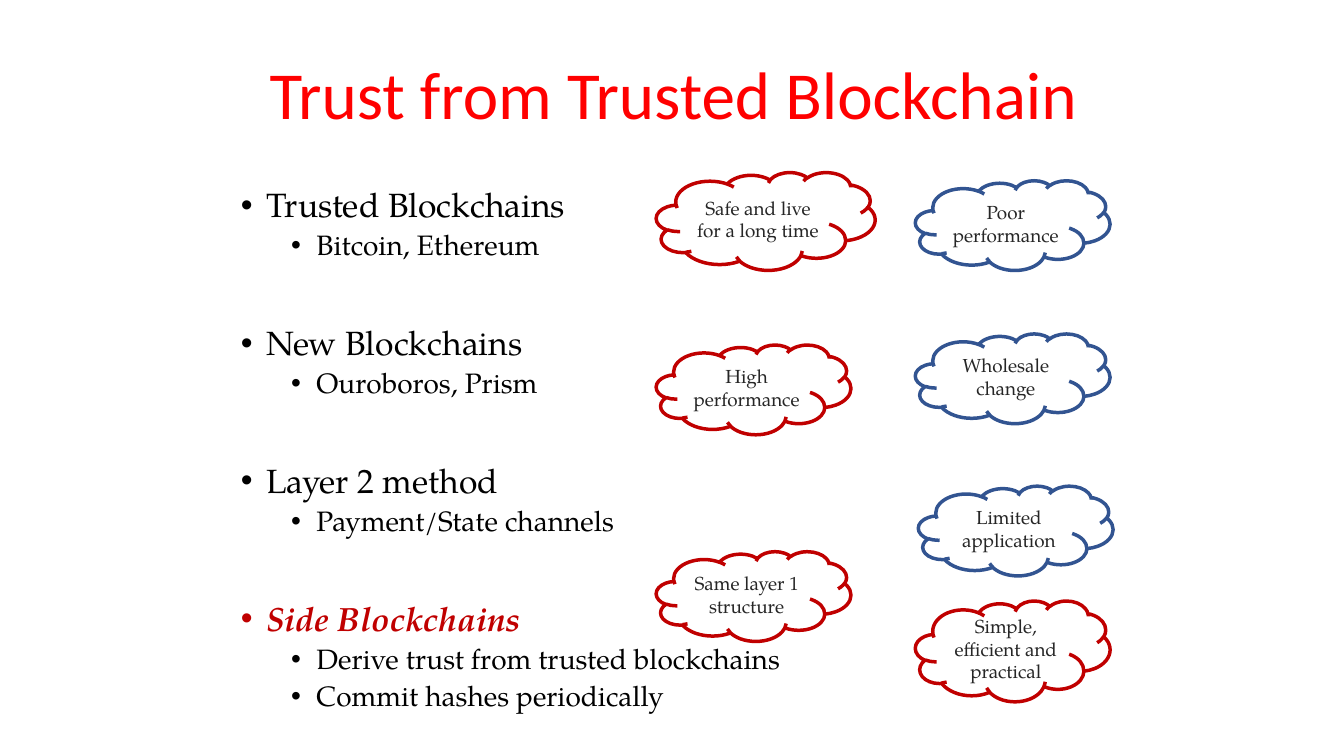
import pptx
import pptx.util
import pptx.dml.color
import pptx.enum.shapes
import pptx.enum.text
import lxml.etree

Inches = pptx.util.Inches
Pt = pptx.util.Pt
RGBColor = pptx.dml.color.RGBColor
PP_ALIGN = pptx.enum.text.PP_ALIGN
MSO_ANCHOR = pptx.enum.text.MSO_ANCHOR

TITLE_RED = RGBColor(0xFF, 0x00, 0x00)
RED = RGBColor(0xC0, 0x00, 0x00)
BLUE = RGBColor(0x32, 0x54, 0x91)
BLACK = RGBColor(0x00, 0x00, 0x00)
DARK_GREY = RGBColor(0x26, 0x26, 0x26)
BODY_FONT = "TeX Gyre Pagella"


def add_text(paragraph, text, formats):
    run = paragraph.add_run()
    run.text = text
    for name, value in formats.items():
        if name == "color":
            run.font.color.rgb = value
        else:
            setattr(run.font, name, value)


def add_bullet(paragraph, left):
    properties = paragraph._p.get_or_add_pPr()
    properties.set("marL", str(Inches(left)))
    properties.set("indent", str(Inches(-0.25)))
    for tag, key, value in (("a:buFont", "typeface", "Arial"), ("a:buChar", "char", "•")):
        element = lxml.etree.SubElement(properties, pptx.oxml.ns.qn(tag))
        element.set(key, value)


deck = pptx.Presentation()
deck.slide_width = Inches(13.33)
deck.slide_height = Inches(7.5)
slide = deck.slides.add_slide(deck.slide_layouts[5])

# Title
title = slide.shapes.title
title.left, title.top = Inches(1.67), Inches(0.14)
title.width, title.height = Inches(10.02), Inches(1.65)
title.text_frame.auto_size = pptx.enum.text.MSO_AUTO_SIZE.NONE
title.text_frame.vertical_anchor = MSO_ANCHOR.MIDDLE
heading = title.text_frame.paragraphs[0]
heading.alignment = PP_ALIGN.CENTER
heading.line_spacing = 0.9
add_text(heading, "Trust from Trusted Blockchain",
         {"name": "Calibri", "size": Pt(48), "color": TITLE_RED})

# Bulleted approaches, each with its examples
approaches = [
    ("Trusted Blockchains", ["Bitcoin, Ethereum"], {"color": BLACK}),
    ("New Blockchains", ["Ouroboros, Prism"], {"color": BLACK}),
    ("Layer 2 method", ["Payment/State channels"], {"color": BLACK}),
    ("Side Blockchains",
     ["Derive trust from trusted blockchains", "Commit hashes periodically"],
     {"color": RED, "bold": True, "italic": True}),
]
outline = slide.shapes.add_textbox(
    Inches(2.29), Inches(1.82), Inches(6.15), Inches(6.25)).text_frame
outline.word_wrap = True
for index, (approach, examples, emphasis) in enumerate(approaches):
    item = outline.add_paragraph() if index else outline.paragraphs[0]
    item.line_spacing = 0.9
    item.space_before = Pt(46 if index else 0)
    add_bullet(item, 0.25)
    add_text(item, approach, {"name": BODY_FONT, "size": Pt(24), **emphasis})
    for example in examples:
        subitem = outline.add_paragraph()
        subitem.level = 1
        subitem.line_spacing = 0.9
        subitem.space_before = Pt(5)
        add_bullet(subitem, 0.75)
        add_text(subitem, example, {"name": BODY_FONT, "size": Pt(20), "color": BLACK})

# Clouds: strengths in red, weaknesses in blue
remarks = [
    ("Safe and live for a long time", 6.51, 1.71, 2.17, 0.97, RED),
    ("Poor performance", 9.08, 1.79, 1.93, 0.89, BLUE),
    ("High performance", 6.51, 3.42, 1.93, 0.89, RED),
    ("Wholesale change", 9.08, 3.31, 1.93, 0.89, BLUE),
    ("Limited application", 9.11, 4.82, 1.93, 0.89, BLUE),
    ("Same layer 1 structure", 6.51, 5.47, 1.93, 0.89, RED),
    ("Simple, efficient and practical", 9.08, 5.96, 1.93, 1, RED),
]
cloud_frame = {
    "word_wrap": True,
    "vertical_anchor": MSO_ANCHOR.MIDDLE,
    "margin_left": Inches(0.07),
    "margin_right": Inches(0.07),
    "margin_top": Inches(0.04),
    "margin_bottom": Inches(0.04),
}
for remark, left, top, width, height, color in remarks:
    cloud = slide.shapes.add_shape(
        pptx.enum.shapes.MSO_SHAPE.CLOUD,
        Inches(left), Inches(top), Inches(width), Inches(height))
    cloud.shadow.inherit = False
    cloud.fill.background()
    cloud.line.color.rgb = color
    cloud.line.width = Pt(2.5)
    for name, value in cloud_frame.items():
        setattr(cloud.text_frame, name, value)
    label = cloud.text_frame.paragraphs[0]
    label.alignment = PP_ALIGN.CENTER
    add_text(label, remark, {"name": BODY_FONT, "size": Pt(13.5), "color": DARK_GREY})

deck.save("out.pptx")
